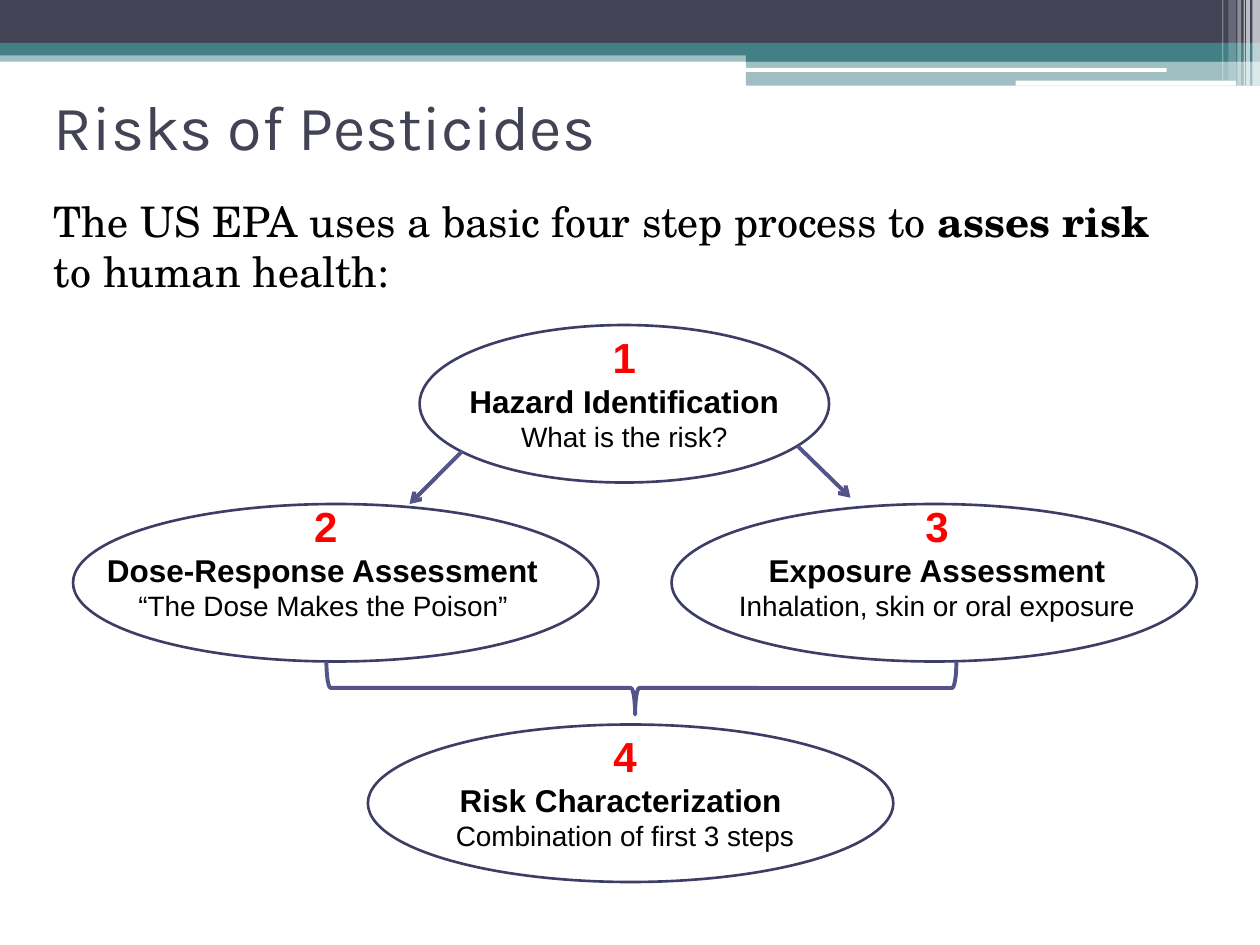
from lxml import etree
from pptx import Presentation
from pptx.dml.color import RGBColor
from pptx.enum.shapes import MSO_CONNECTOR, MSO_SHAPE
from pptx.enum.text import MSO_ANCHOR, PP_ALIGN
from pptx.oxml.ns import qn
from pptx.util import Inches, Pt

RECTANGLE = MSO_SHAPE.RECTANGLE
ROUNDED = MSO_SHAPE.ROUNDED_RECTANGLE
OVAL = MSO_SHAPE.OVAL
RIGHT_BRACE = MSO_SHAPE.RIGHT_BRACE
STRAIGHT = MSO_CONNECTOR.STRAIGHT
LEFT = PP_ALIGN.LEFT
CENTER = PP_ALIGN.CENTER
TOP = MSO_ANCHOR.TOP
MIDDLE = MSO_ANCHOR.MIDDLE

NAVY = "424456"
TEAL = "438086"
WHITE = "FFFFFF"
BLACK = "000000"
RED = "FF0000"
OUTLINE = "3D3E66"
VIOLET = "53548A"


def paint(fill, color, opacity=100):
    fill.solid()
    fill.fore_color.rgb = RGBColor.from_string(color)
    if opacity < 100:
        color_element = fill._xPr.find(qn("a:solidFill"))[0]
        etree.SubElement(color_element, qn("a:alpha"), val=str(opacity * 1000))


def add_text(paragraph, text, font="Arial", size=16, color=BLACK, bold=False,
             align=CENTER, indent=0):
    paragraph.alignment = align
    if indent:
        paragraph._p.get_or_add_pPr().set("marL", str(Inches(indent)))
    for index, line in enumerate(text.split("\n")):
        if index:
            paragraph.add_line_break()
        if line:
            run = paragraph.add_run()
            run.text = line
            run.font.name = font
            run.font.size = Pt(size)
            run.font.bold = bold
            paint(run.font.fill, color)


presentation = Presentation()
presentation.slide_width = Inches(10)
presentation.slide_height = Inches(7.5)
slide = presentation.slides.add_slide(presentation.slide_layouts[6])

header_bands = [
    (RECTANGLE, 0, 0.4, 10, 0.09, TEAL, 50),
    (RECTANGLE, 0, 0, 10, 0.34, NAVY, 100),
    (RECTANGLE, 0, 0.34, 10, 0.1, TEAL, 100),
    (RECTANGLE, 5.92, 0.39, 4.08, 0.1, TEAL, 100),
    (RECTANGLE, 5.92, 0.48, 4.08, 0.2, TEAL, 50),
    (ROUNDED, 5.91, 0.54, 3.35, 0.03, WHITE, 100),
    (ROUNDED, 8.06, 0.64, 1.75, 0.04, WHITE, 100),
    (RECTANGLE, 9.94, 0, 0.06, 0.68, WHITE, 65),
    (RECTANGLE, 9.89, 0, 0.03, 0.68, WHITE, 65),
    (RECTANGLE, 9.87, 0, 0.01, 0.68, WHITE, 60),
    (RECTANGLE, 9.82, 0, 0.03, 0.68, WHITE, 40),
    (RECTANGLE, 9.75, 0, 0.06, 0.64, WHITE, 20),
    (RECTANGLE, 9.7, 0, 0.01, 0.64, WHITE, 30),
]
for kind, left, top, width, height, color, opacity in header_bands:
    shape = slide.shapes.add_shape(
        kind, Inches(left), Inches(top), Inches(width), Inches(height))
    shape.shadow.inherit = False
    shape.line.fill.background()
    paint(shape.fill, color, opacity)

for left, top, width in [(2.92, 5.75, 4.17), (5.33, 4, 4.17),
                         (0.58, 4, 4.17), (3.33, 2.58, 3.25)]:
    shape = slide.shapes.add_shape(
        OVAL, Inches(left), Inches(top), Inches(width), Inches(1.25))
    shape.shadow.inherit = False
    paint(shape.fill, WHITE)
    paint(shape.line.fill, OUTLINE)
    shape.line.width = Pt(1.5)

title = {"font": "Karla", "size": 36, "color": NAVY, "align": LEFT}
body = {"font": "TeX Gyre Schola", "size": 24, "align": LEFT}
number = {"size": 24, "color": RED, "bold": True}
heading = {"size": 18, "bold": True}

text_boxes = [
    (0.33, 0.41, 9.17, 1.17, MIDDLE, 0.1, [[("Risks of Pesticides", title)]]),
    (0.33, 1.5, 9.17, 0.91, TOP, 0.1, [[
        ("The US EPA uses a basic four step process to ", body),
        ("asses risk\n", {**body, "bold": True}),
        ("to human health:", body)]]),
    (0.75, 3.92, 3.67, 1.11, TOP, 0.1, [
        [("2", number)],
        [("Dose-Response Assessment", {**heading, "align": LEFT})],
        [("“The Dose Makes the Poison”", {"align": LEFT, "indent": 0.25})]]),
    (5.25, 3.92, 4.25, 1.11, TOP, 0.22, [
        [("3", number)],
        [("Exposure Assessment", heading)],
        [("Inhalation, skin or oral exposure", {})]]),
    (3.17, 5.75, 3.58, 1.38, TOP, 0.1, [
        [("4", number)],
        [("Risk Characterization \n", heading),
         ("Combination of first 3 steps", {})]]),
    (3.58, 2.58, 2.75, 1.11, TOP, 0.1, [
        [("1", number)],
        [("Hazard Identification", heading)],
        [("What is the risk?", {})]]),
]
for left, top, width, height, anchor, inset, paragraphs in text_boxes:
    frame = slide.shapes.add_textbox(
        Inches(left), Inches(top), Inches(width), Inches(height)).text_frame
    frame.word_wrap = True
    frame.vertical_anchor = anchor
    frame.margin_left = Inches(inset)
    for index, runs in enumerate(paragraphs):
        paragraph = frame.add_paragraph() if index else frame.paragraphs[0]
        for text, text_format in runs:
            add_text(paragraph, text, **text_format)

brace = slide.shapes.add_shape(
    RIGHT_BRACE, Inches(4.88), Inches(2.96), Inches(0.42), Inches(5))
brace.rotation = 90
brace.adjustments[0] = 0.08
brace.adjustments[1] = 0.51
brace.shadow.inherit = False
brace.fill.background()
paint(brace.line.fill, VIOLET)
brace.line.width = Pt(2.25)

for start_x, start_y, end_x, end_y in [(6.33, 3.54, 6.75, 3.95),
                                       (3.67, 3.58, 3.25, 4)]:
    arrow = slide.shapes.add_connector(
        STRAIGHT, Inches(start_x), Inches(start_y), Inches(end_x), Inches(end_y))
    paint(arrow.line.fill, VIOLET)
    arrow.line.width = Pt(2.25)
    etree.SubElement(arrow.line._get_or_add_ln(), qn("a:tailEnd"), type="arrow")
    etree.SubElement(arrow._element.spPr, qn("a:effectLst"))

presentation.save("out.pptx")
